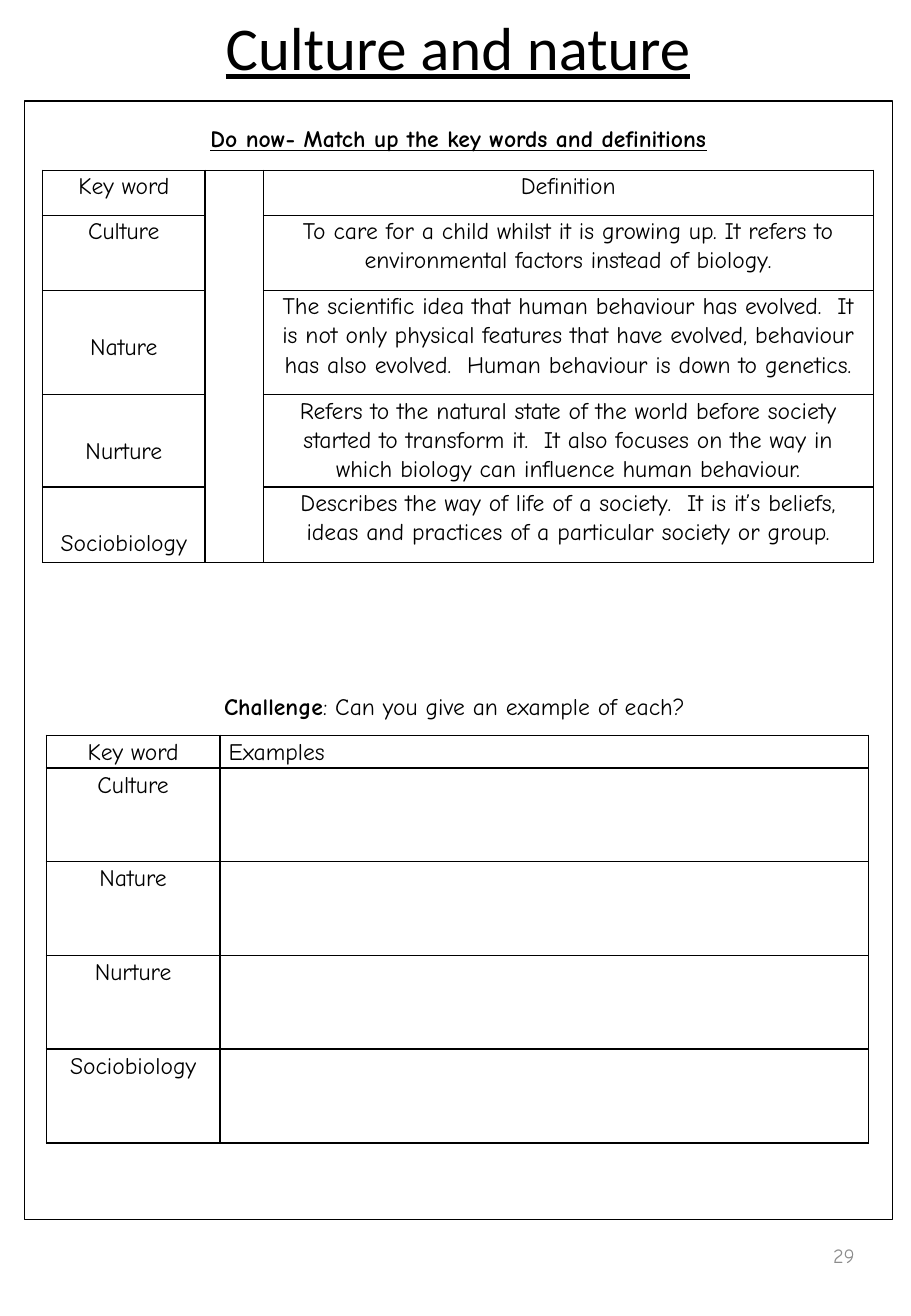
import dataclasses
import typing

import lxml.etree
import pptx
import pptx.dml.color
import pptx.enum.shapes
import pptx.enum.text
import pptx.oxml.ns
import pptx.util

Cm = pptx.util.Cm
Pt = pptx.util.Pt
Rgb = pptx.dml.color.RGBColor
Align = pptx.enum.text.PP_ALIGN
Anchor = pptx.enum.text.MSO_ANCHOR


@dataclasses.dataclass(frozen=True)
class Theme:
    ink: str = "000000"
    paper: str = "FFFFFF"
    grey: str = "8C8C8C"
    head: str = "Calibri"
    body: str = "Comic Neue"
    title: float = 36
    text: float = 14
    small: float = 12
    frame: float = 0.75
    rule: float = 1


THEME = Theme()


@dataclasses.dataclass(frozen=True)
class Style:
    size: float = THEME.text
    font: str = THEME.body
    color: str = THEME.ink
    bold: bool = False
    under: bool = False


@dataclasses.dataclass(frozen=True)
class Label:
    text: str
    box: tuple[float, float, float, float]
    align: typing.Any
    style: Style


@dataclasses.dataclass(frozen=True)
class Entry:
    text: str
    top: float = 0.03
    align: typing.Any = Align.CENTER


@dataclasses.dataclass(frozen=True)
class Grid:
    left: float
    top: float
    cols: list[float]
    rows: list[float]
    space: float
    cells: list[list[Entry | None]]
    merge: int | None = None


PLAIN = Style()
LOW = 0.87
WORDS = ["Culture", "Nature", "Nurture", "Sociobiology"]
MEANS = [
    "To care for a child whilst it is growing up. It refers to environmental "
    "factors instead of biology.",
    "The scientific idea that human behaviour has evolved.  It is not only "
    "physical features that have evolved, behaviour has also evolved.  Human "
    "behaviour is down to genetics.",
    "Refers to the natural state of the world before society started to "
    "transform it.  It also focuses on the way in which biology can influence "
    "human behaviour.",
    "Describes the way of life of a society.  It is it’s beliefs, ideas and "
    "practices of a particular society or group.",
]
TOPS = [0.03, LOW, LOW, LOW]

LABELS = [
    Label("29", (13.67, 25.5, 4.45, 1.47), Align.RIGHT,
          Style(THEME.small, color=THEME.grey)),
    Label("Culture and nature", (0.08, -0.1, 19, 2.13), Align.CENTER,
          Style(THEME.title, THEME.head, under=True)),
]
GRIDS = [
    Grid(0.89, 3.56, [3.4, 1.22, 12.75], [0.94, 1.57, 2.18, 1.85, 1.57], 1.07,
         [[Entry("Key word"), None, Entry("Definition")]]
         + [[Entry(word, top), None, Entry(mean)]
            for word, top, mean in zip(WORDS, TOPS, MEANS)],
         merge=1),
    Grid(0.97, 15.37, [3.63, 13.56], [0.66] + [1.96] * 4, 1.15,
         [[Entry("Key word", 0), Entry("Examples", 0, Align.LEFT)]]
         + [[Entry(word, 0), None] for word in WORDS]),
]


def paint(run: typing.Any, style: Style) -> None:
    font = run.font
    font.size = Pt(style.size)
    font.name = style.font
    font.bold = style.bold
    font.underline = style.under
    font.color.rgb = Rgb.from_string(style.color)


def label(slide: typing.Any, item: Label) -> None:
    box = slide.shapes.add_textbox(*map(Cm, item.box))
    frame = box.text_frame
    frame.word_wrap = True
    frame.vertical_anchor = Anchor.MIDDLE
    frame.text = item.text
    line = frame.paragraphs[0]
    line.alignment = item.align
    paint(line.runs[0], item.style)


def panel(slide: typing.Any) -> None:
    rect = slide.shapes.add_shape(
        pptx.enum.shapes.MSO_SHAPE.RECTANGLE,
        Cm(0.51), Cm(2.11), Cm(18.16), Cm(23.39))
    rect.shadow.inherit = False
    rect.fill.solid()
    rect.fill.fore_color.rgb = Rgb.from_string(THEME.paper)
    rect.line.color.rgb = Rgb.from_string(THEME.ink)
    rect.line.width = Pt(THEME.frame)
    frame = rect.text_frame
    frame.word_wrap = True
    frame.vertical_anchor = Anchor.TOP
    frame.margin_top = Cm(0.48)
    frame.text = "Do now- Match up the key words and definitions"
    first = frame.paragraphs[0]
    first.alignment = Align.CENTER
    paint(first.runs[0], Style(bold=True, under=True))
    task = frame.add_paragraph()
    task.text = "Challenge"
    task.add_run().text = ": Can you give an example of each? "
    task.alignment = Align.CENTER
    task.space_before = Pt(320)
    for run, style in zip(task.runs, [Style(bold=True), PLAIN]):
        paint(run, style)


def border(cell: typing.Any) -> None:
    qn = pptx.oxml.ns.qn
    props = cell._tc.get_or_add_tcPr()
    for spot, side in enumerate(["lnL", "lnR", "lnT", "lnB"]):
        line = lxml.etree.Element(qn(f"a:{side}"), w=str(Pt(THEME.rule)))
        fill = lxml.etree.SubElement(line, qn("a:solidFill"))
        lxml.etree.SubElement(fill, qn("a:srgbClr"), val=THEME.ink)
        props.insert(spot, line)


def write(cell: typing.Any, entry: Entry, space: float) -> None:
    cell.margin_left = cell.margin_right = Cm(0.18)
    cell.margin_top = Cm(entry.top)
    cell.margin_bottom = Cm(0)
    cell.text_frame.text = entry.text
    line = cell.text_frame.paragraphs[0]
    line.alignment = entry.align
    line.line_spacing = space
    paint(line.runs[0], PLAIN)


def table(slide: typing.Any, grid: Grid) -> None:
    sheet = slide.shapes.add_table(
        len(grid.rows), len(grid.cols), Cm(grid.left), Cm(grid.top),
        Cm(sum(grid.cols)), Cm(sum(grid.rows))).table
    sheet.first_row = False
    sheet.horz_banding = False
    for col, width in zip(sheet.columns, grid.cols):
        col.width = Cm(width)
    for row, height, items in zip(sheet.rows, grid.rows, grid.cells):
        row.height = Cm(height)
        for cell, entry in zip(row.cells, items):
            cell.fill.background()
            border(cell)
            if entry:
                write(cell, entry, grid.space)
    if grid.merge is not None:
        last = sheet.cell(len(grid.rows) - 1, grid.merge)
        sheet.cell(0, grid.merge).merge(last)


def main() -> None:
    deck = pptx.Presentation()
    deck.slide_width = Cm(19.05)
    deck.slide_height = Cm(27.51)
    slide = deck.slides.add_slide(deck.slide_layouts[6])
    for item in LABELS:
        label(slide, item)
    panel(slide)
    for grid in GRIDS:
        table(slide, grid)
    deck.save("out.pptx")


if __name__ == "__main__":
    main()
